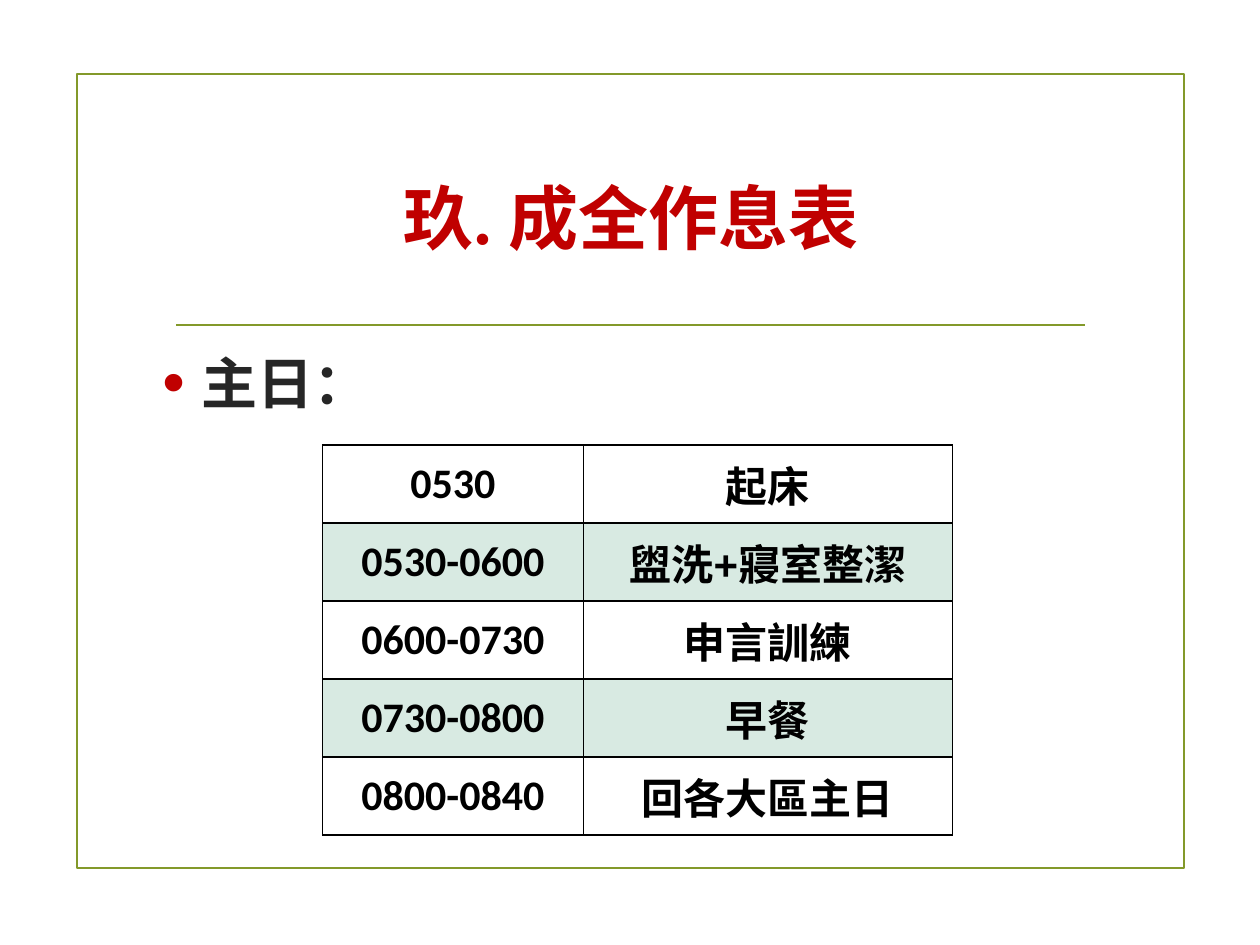
from typing import NamedTuple

from lxml import etree
from pptx import Presentation
from pptx.dml.color import RGBColor
from pptx.enum.shapes import MSO_CONNECTOR, MSO_SHAPE
from pptx.enum.text import MSO_ANCHOR, PP_ALIGN
from pptx.oxml import parse_xml
from pptx.oxml.ns import nsdecls, qn
from pptx.util import Inches, Pt

LINE = MSO_CONNECTOR.STRAIGHT
RECT = MSO_SHAPE.RECTANGLE
CENTER, LEFT = PP_ALIGN.CENTER, PP_ALIGN.LEFT
MIDDLE, TOP = MSO_ANCHOR.MIDDLE, MSO_ANCHOR.TOP

OLIVE = RGBColor(0x83, 0x99, 0x2A)
RED = RGBColor(0xC0, 0x00, 0x00)
DARK = RGBColor(0x26, 0x26, 0x26)
BLACK = RGBColor(0x00, 0x00, 0x00)
GREEN = RGBColor(0x3C, 0x97, 0x70)


class Style(NamedTuple):
    font: str
    size: int
    color: RGBColor
    align: PP_ALIGN = CENTER


class Slot(NamedTuple):
    time: str
    task: str


TITLE = Style("Times New Roman", 40, RED)
DAY = Style("Arial", 32, DARK, LEFT)
TIME = Style("Calibri", 24, BLACK)
TASK = Style("Arial", 24, BLACK)

SLOTS = [
    Slot("0530", "起床"),
    Slot("0530-0600", "盥洗+寢室整潔"),
    Slot("0600-0730", "申言訓練"),
    Slot("0730-0800", "早餐"),
    Slot("0800-0840", "回各大區主日"),
]
WIDTHS = (2.07, 2.93)
ROW = 0.62


def write(frame, text: str, style: Style) -> None:
    frame.text = text
    para = frame.paragraphs[0]
    para.alignment = style.align
    font = para.runs[0].font
    font.name, font.size, font.bold = style.font, Pt(style.size), True
    font.color.rgb = style.color


def add_text(slide, box: tuple, text: str, style: Style, anchor: MSO_ANCHOR):
    frame = slide.shapes.add_textbox(*map(Inches, box)).text_frame
    frame.word_wrap = True
    frame.vertical_anchor = anchor
    write(frame, text, style)
    return frame.paragraphs[0]


def add_bullet(para) -> None:
    props = para._p.get_or_add_pPr()
    props.set("marL", str(Inches(0.31)))
    props.set("indent", str(-Inches(0.31)))
    for xml in (
        f'<a:buClr {nsdecls("a")}><a:srgbClr val="{RED}"/></a:buClr>',
        f'<a:buSzPct {nsdecls("a")} val="115000"/>',
        f'<a:buFont {nsdecls("a")} typeface="Arial"/>',
        f'<a:buChar {nsdecls("a")} char="•"/>',
    ):
        props.append(parse_xml(xml))


def add_frame(slide) -> None:
    frame = slide.shapes.add_shape(RECT, *map(Inches, (0.61, 0.59, 8.79, 6.3)))
    frame.shadow.inherit = False
    frame.fill.background()
    rule = slide.shapes.add_connector(LINE, *map(Inches, (1.4, 2.58, 8.61, 2.58)))
    etree.SubElement(rule._element.spPr, qn("a:effectLst"))
    for item in (frame, rule):
        item.line.color.rgb = OLIVE
        item.line.width = Pt(1.25)


def add_borders(cell) -> None:
    props = cell._tc.get_or_add_tcPr()
    for side in ("lnL", "lnR", "lnT", "lnB"):
        props.append(parse_xml(
            f'<a:{side} {nsdecls("a")} w="{Pt(1)}"><a:solidFill>'
            f'<a:srgbClr val="{BLACK}"/></a:solidFill></a:{side}>'))


def tint(cell) -> None:
    """Fill the cell with green at 20 % opacity."""
    cell.fill.solid()
    cell.fill.fore_color.rgb = GREEN
    color = cell._tc.tcPr.find(f'{qn("a:solidFill")}/{qn("a:srgbClr")}')
    etree.SubElement(color, qn("a:alpha")).set("val", "20000")


def add_plan(slide) -> None:
    box = (2.56, 3.53, sum(WIDTHS), ROW * len(SLOTS))
    table = slide.shapes.add_table(
        len(SLOTS), len(WIDTHS), *map(Inches, box)).table
    table.first_row = table.horz_banding = False
    for col, width in zip(table.columns, WIDTHS):
        col.width = Inches(width)
    for i, slot in enumerate(SLOTS):
        table.rows[i].height = Inches(ROW)
        for j, (text, style) in enumerate(zip(slot, (TIME, TASK))):
            cell = table.cell(i, j)
            cell.margin_left = cell.margin_right = Inches(0.07)
            cell.margin_top = cell.margin_bottom = 0
            cell.vertical_anchor = MIDDLE
            write(cell.text_frame, text, style)
            add_borders(cell)
            if i % 2:
                tint(cell)
            else:
                cell.fill.background()


def main() -> None:
    deck = Presentation()
    deck.slide_width, deck.slide_height = Inches(10), Inches(7.5)
    slide = deck.slides.add_slide(deck.slide_layouts[6])
    add_frame(slide)
    add_text(slide, (1.29, 1, 7.44, 1.43), "玖. 成全作息表", TITLE, MIDDLE)
    day = add_text(slide, (1.19, 2.72, 7.62, 0.7), "主日：", DAY, TOP)
    day.space_after = Pt(6)
    add_bullet(day)
    add_plan(slide)
    deck.save("out.pptx")


if __name__ == "__main__":
    main()
